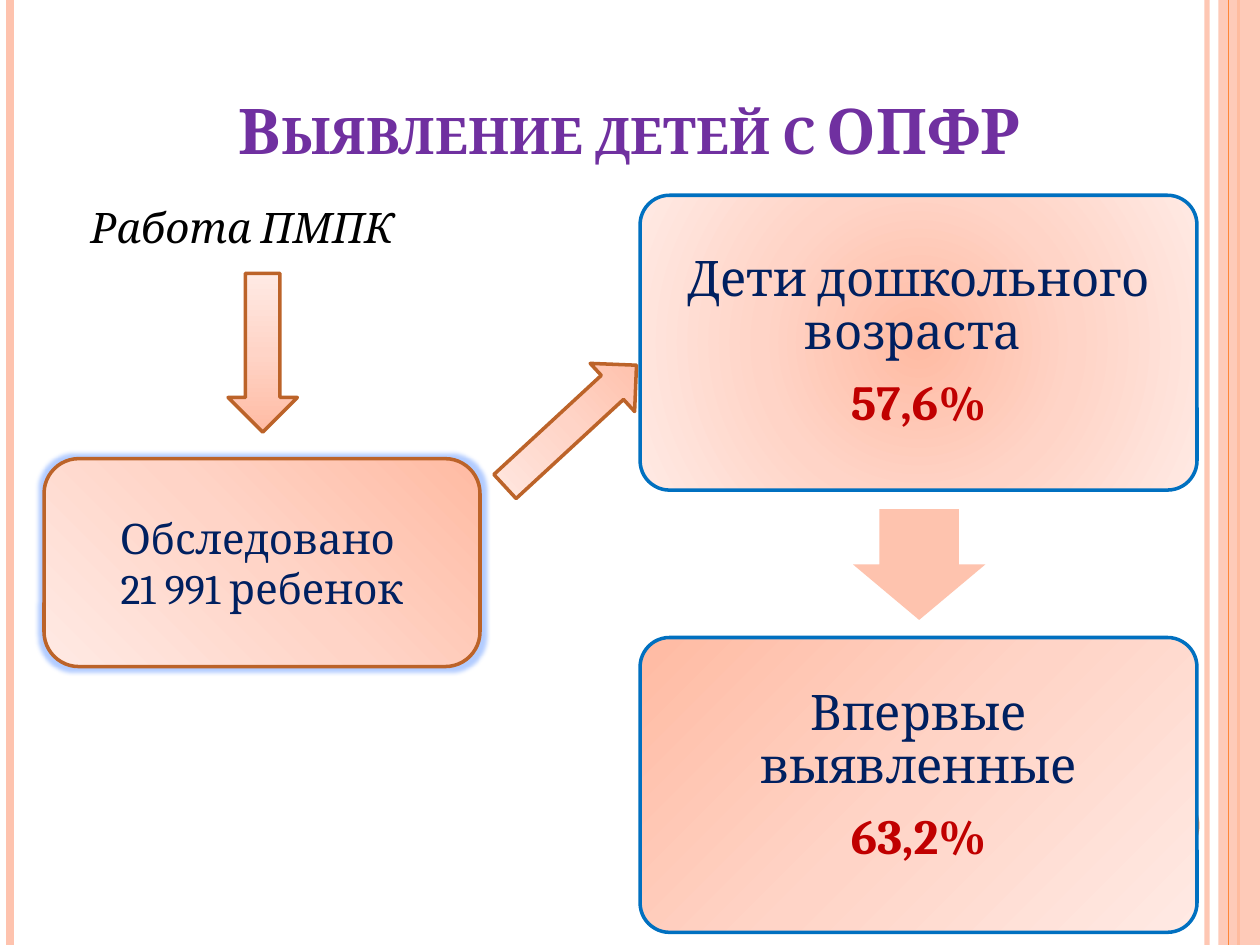
from pptx import Presentation, oxml
from pptx.dml.color import RGBColor
from pptx.enum import shapes, text
from pptx.oxml import ns
from pptx.util import Inches, Pt

COLORS = {
    "peach": "FEC3AE", "orange": "FE8637", "purple": "7030A0", "black": "000000",
    "navy": "002060", "red": "C00000", "blue": "0070C0", "brown": "BC6329",
    "glow": "6699FF",
}
GRADIENT = {0: "FFBBA3", 50: "FFD4C7", 100: "FFEAE4"}
RADIAL = '<a:path path="circle"><a:fillToRect l="{}" t="{}" r="{}" b="{}"/></a:path>'
LINEAR = '<a:lin ang="{}" scaled="0"/>'
CENTER_GLOW = RADIAL.format(50000, 50000, 50000, 50000)
CORNER_GLOW = RADIAL.format(100000, 0, 0, 100000)
SHAPE = shapes.MSO_SHAPE
A = ns.nsdecls("a")

prs = Presentation()
prs.slide_width, prs.slide_height = Inches(10), Inches(7.5)
slide = prs.slides.add_slide(prs.slide_layouts[5])


def add_block(kind, box, fill=None, shading=None, outline=None, adjustments=()):
    """Add a preset shape with a flat fill, or the peach gradient run as shading says."""
    block = slide.shapes.add_shape(kind, *map(Inches, box))
    block.shadow.inherit = False
    for i, value in enumerate(adjustments):
        block.adjustments[i] = value
    if shading:
        block.fill.gradient()
        stops = "".join(
            f'<a:gs pos="{pos * 1000}"><a:srgbClr val="{color}"/></a:gs>'
            for pos, color in GRADIENT.items())
        grad = block._element.spPr.find(ns.qn("a:gradFill"))
        grad.getparent().replace(grad, oxml.parse_xml(
            f'<a:gradFill {A} rotWithShape="1"><a:gsLst>{stops}</a:gsLst>{shading}</a:gradFill>'))
    else:
        block.fill.solid()
        block.fill.fore_color.rgb = RGBColor.from_string(COLORS[fill])
    if outline:
        block.line.color.rgb = RGBColor.from_string(COLORS[outline])
        block.line.width = Pt(2)
    else:
        block.line.fill.background()
    return block


def write(frame, lines, align, anchor, **spacing):
    """Fill a frame with (text, size, colour, font attributes) paragraphs."""
    frame.word_wrap = True
    frame.vertical_anchor = anchor
    for i, (words, size, color, style) in enumerate(lines):
        para = frame.paragraphs[0] if i == 0 else frame.add_paragraph()
        para.alignment = align
        for name, value in spacing.items():
            setattr(para, name, value)
        run = para.add_run()
        run.text = words
        run.font.color.rgb = RGBColor.from_string(COLORS[color])
        for name, value in {"name": "Cambria", "size": Pt(size), **style}.items():
            setattr(run.font, name, value)


CENTER, MIDDLE = text.PP_ALIGN.CENTER, text.MSO_ANCHOR.MIDDLE

# Side stripes
band = add_block(SHAPE.RECTANGLE, (9.67, 0, 0.33, 7.5), "peach")
stripes = []
for x, color, width in [(9.58, "peach", 3), (0.08, "peach", 4.5),
                        (9.83, "orange", 1.5), (9.75, "orange", 0.75)]:
    stripe = slide.shapes.add_connector(
        shapes.MSO_CONNECTOR.STRAIGHT, Inches(x), 0, Inches(x), Inches(7.5))
    stripe.line.color.rgb = RGBColor.from_string(COLORS[color])
    stripe.line.width = Pt(width)
    stripe._element.spPr.append(oxml.parse_xml(f"<a:effectLst {A}/>"))
    stripes.append(stripe)
# The orange line at 9.83 lies beneath the translucent band
band._element.addprevious(stripes[2]._element)
for part, alpha in [(band, 87), (stripes[0], 93)]:
    color = next(part._element.spPr.iter(ns.qn("a:srgbClr")))
    color.append(oxml.parse_xml(f'<a:alpha {A} val="{alpha * 1000}"/>'))
add_block(SHAPE.OVAL, (8.92, 6.25, 0.6, 0.6), "orange")

# Headings
title = slide.shapes.title
title.left, title.top, title.width, title.height = map(Inches, (0.5, 0.44, 9, 0.94))
write(title.text_frame, [("Выявление детей с ОПФР", 36, "purple", {"bold": True})],
      CENTER, text.MSO_ANCHOR.BOTTOM)
title.text_frame.paragraphs[0].runs[0].font._element.set("cap", "small")

commission = slide.shapes.add_textbox(*map(Inches, (0.5, 1.55, 4.42, 0.55)))
commission.text_frame.margin_left = Inches(0.22)
write(commission.text_frame, [("Работа ПМПК", 24, "black", {"italic": True})],
      text.PP_ALIGN.LEFT, text.MSO_ANCHOR.TOP)

# Share boxes, one above the other
for top, shading, bottom_margin, label, share in [
        (1.55, CENTER_GLOW, 0.12, "Дети дошкольного возраста ", "57,6%"),
        (5.06, LINEAR.format(45 * 60000), 0.25, "Впервые выявленные", "63,2%")]:
    share_box = add_block(SHAPE.ROUNDED_RECTANGLE, (5.08, top, 4.42, 2.34),
                          shading=shading, outline="blue", adjustments=[0.1])
    frame = share_box.text_frame
    for side in ("left", "top", "right"):
        setattr(frame, f"margin_{side}", Inches(0.12))
    frame.margin_bottom = Inches(bottom_margin)
    write(frame, [(label, 28, "navy", {}), (share, 28, "red", {"bold": True})],
          CENTER, MIDDLE, line_spacing=0.9, space_after=Pt(10))
add_block(SHAPE.DOWN_ARROW, (6.77, 4.04, 1.05, 0.88), "peach", adjustments=[0.6, 0.5])

# Examined children and the arrows to and from them
add_block(SHAPE.DOWN_ARROW, (1.81, 2.17, 0.55, 1.26),
          shading=LINEAR.format(270 * 60000), outline="brown")
examined = add_block(SHAPE.ROUNDED_RECTANGLE, (0.35, 3.64, 3.46, 1.65),
                     shading=CORNER_GLOW, outline="brown")
examined._element.spPr.find(ns.qn("a:effectLst")).append(oxml.parse_xml(
    f'<a:glow {A} rad="{Pt(5)}"><a:srgbClr val="{COLORS["glow"]}">'
    '<a:alpha val="50000"/></a:srgbClr></a:glow>'))
write(examined.text_frame, [("Обследовано ", 24, "navy", {}),
                            ("21 991 ребенок", 24, "navy", {})], CENTER, MIDDLE)
to_shares = add_block(SHAPE.RIGHT_ARROW, (3.82, 3.12, 1.42, 0.52),
                      shading=LINEAR.format(180 * 60000), outline="brown")
to_shares.rotation = 317.3

prs.save("out.pptx")
